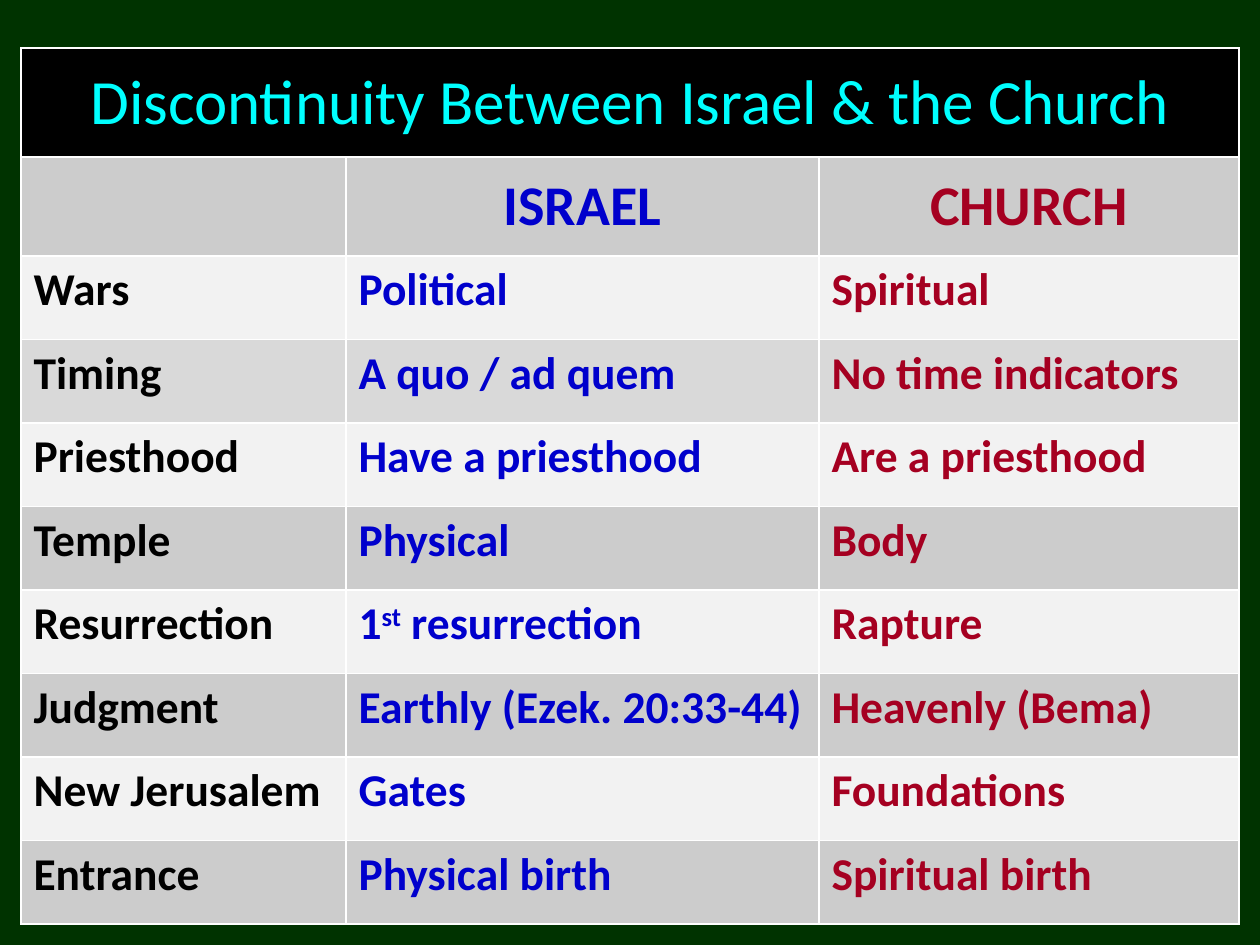
from lxml.etree import SubElement
from pptx import Presentation
from pptx.dml.color import RGBColor
from pptx.enum.text import MSO_ANCHOR as Anchor, PP_ALIGN as Align
from pptx.oxml.ns import qn
from pptx.util import Pt

PX = 914400 / 126
COLORS = {
    "background": "003300", "title_fill": "000000", "title": "00FFFF",
    "header": "CCCCCC", "light": "F2F2F2", "medium": "D9D9D9", "dark": "CCCCCC",
    "topic": "000000", "israel": "0000CC", "church": "A50021", "border": "FFFFFF",
}
TITLE = "Discontinuity Between Israel & the Church"
HEADERS = ["", "ISRAEL", "CHURCH"]
COLUMN_COLORS = ["topic", "israel", "church"]
COLUMN_WIDTHS = [325, 473, 420]
TITLE_HEIGHT, HEADER_HEIGHT = 109, 99
CONTRASTS = [
    ("light", "Wars", "Political", "Spiritual"),
    ("medium", "Timing", "A quo / ad quem", "No time indicators"),
    ("light", "Priesthood", "Have a priesthood", "Are a priesthood"),
    ("dark", "Temple", "Physical", "Body"),
    ("light", "Resurrection", "1^st^ resurrection", "Rapture"),
    ("dark", "Judgment", "Earthly (Ezek. 20:33-44)", "Heavenly (Bema)"),
    ("light", "New Jerusalem", "Gates", "Foundations"),
    ("dark", "Entrance", "Physical birth", "Spiritual birth"),
]


def px(length):
    """Turn pixels into EMU."""
    return round(length * PX)


def rgb(name):
    """Look up a named colour."""
    return RGBColor.from_string(COLORS[name])


def style_cell(cell, fill):
    """Give a cell its fill and thin borders."""
    properties = cell._tc.get_or_add_tcPr()
    for side in ("lnL", "lnR", "lnT", "lnB"):
        line = SubElement(properties, qn(f"a:{side}"), w=str(Pt(1)))
        solid = SubElement(line, qn("a:solidFill"))
        SubElement(solid, qn("a:srgbClr"), val=COLORS["border"])
    cell.fill.solid()
    cell.fill.fore_color.rgb = rgb(fill)


def write_cell(cell, text, size, color, bold=True, centered=False):
    """Write a cell, raising any part between carets."""
    paragraph = cell.text_frame.paragraphs[0]
    if centered:
        cell.vertical_anchor = Anchor.MIDDLE
        paragraph.alignment = Align.CENTER
    else:
        paragraph.space_before = paragraph.space_after = Pt(6)
    paragraph.font.size = Pt(size)
    for index, part in enumerate(text.split("^")):
        run = paragraph.add_run()
        run.text = part
        run.font.name = "Calibri"
        run.font.size = Pt(size)
        run.font.bold = bold
        run.font.color.rgb = rgb(color)
        if index % 2:
            run._r.get_or_add_rPr().set("baseline", "30000")


def add_comparison(slide, left, top, width, height):
    """Place the comparison table in the given box."""
    table = slide.shapes.add_table(
        len(CONTRASTS) + 2, len(HEADERS), px(left), px(top), px(width), px(height)
    ).table
    for column, column_width in zip(table.columns, COLUMN_WIDTHS):
        column.width = px(column_width)
    body_height = (height - TITLE_HEIGHT - HEADER_HEIGHT) / len(CONTRASTS)
    heights = [TITLE_HEIGHT, HEADER_HEIGHT] + [body_height] * len(CONTRASTS)
    fills = ["title_fill", "header"] + [contrast[0] for contrast in CONTRASTS]
    for row, row_height, fill in zip(table.rows, heights, fills):
        row.height = px(row_height)
        for cell in row.cells:
            style_cell(cell, fill)

    table.cell(0, 0).merge(table.cell(0, len(HEADERS) - 1))
    write_cell(table.cell(0, 0), TITLE, 36, "title", bold=False, centered=True)
    for index, color in enumerate(COLUMN_COLORS):
        if HEADERS[index]:
            write_cell(table.cell(1, index), HEADERS[index], 32, color, centered=True)
        for row_index, (_, *texts) in enumerate(CONTRASTS, start=2):
            write_cell(table.cell(row_index, index), texts[index], 26, color)


def main():
    """Build and save the slide."""
    presentation = Presentation()
    presentation.slide_width, presentation.slide_height = px(1260), px(945)
    slide = presentation.slides.add_slide(presentation.slide_layouts[6])
    slide.background.fill.solid()
    slide.background.fill.fore_color.rgb = rgb("background")
    add_comparison(slide, 21, 48, sum(COLUMN_WIDTHS), 876)
    presentation.save("out.pptx")


if __name__ == "__main__":
    main()
